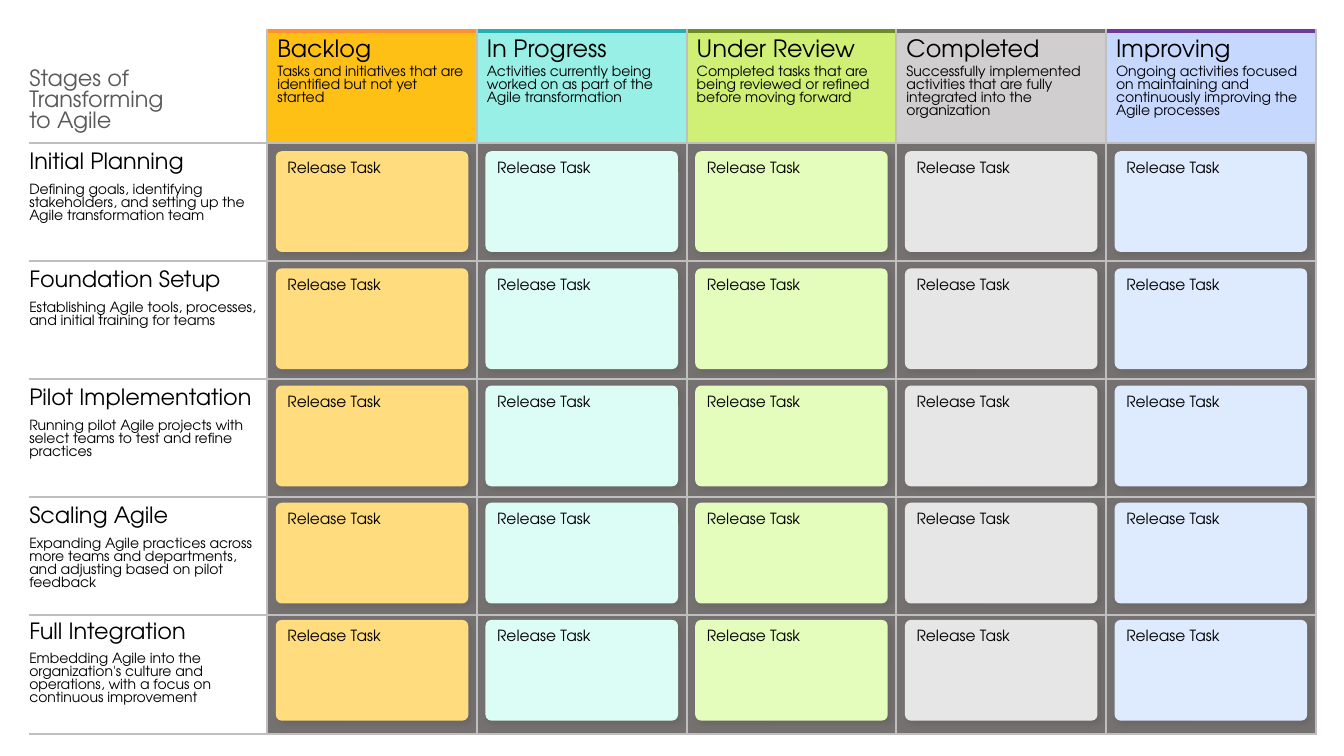
from lxml.etree import SubElement
from pptx import Presentation
from pptx.dml.color import RGBColor
from pptx.enum.shapes import MSO_SHAPE
from pptx.enum.text import MSO_ANCHOR, PP_ALIGN
from pptx.oxml.ns import qn
from pptx.util import Inches, Pt

FONT = "TeX Gyre Adventor"
NO_STYLE = "{2D5ABB26-0587-4C30-8999-92F81FD0307C}"
COLORS = {"text": "000000", "title": "595959", "shadow": "595959",
          "line": "BFBFBF", "lane": "767171"}
TITLE = "Stages of\nTransforming \vto Agile"
COLUMNS = [
    ("Backlog", "Tasks and initiatives that are identified but not yet started",
     {"top": "FF9132", "head": "FFC016", "card": "FFDC7E"}),
    ("In Progress", "Activities currently being worked on as part of the Agile transformation",
     {"top": "26AFAE", "head": "98EFE6", "card": "DBFDF5"}),
    ("Under Review", "Completed tasks that are being reviewed or refined before moving forward",
     {"top": "6D8D24", "head": "CFEF75", "card": "E4FCBC"}),
    ("Completed", "Successfully implemented activities that are fully integrated into the organization",
     {"top": "767171", "head": "D0CECE", "card": "E7E6E6"}),
    ("Improving", "Ongoing activities focused on maintaining and continuously improving the Agile processes",
     {"top": "6F3B9A", "head": "C7D8FF", "card": "DEEBFF"}),
]
STAGES = [
    ("Initial Planning",
     "Defining goals, identifying stakeholders, and setting up the Agile transformation team"),
    ("Foundation Setup",
     "Establishing Agile tools, processes, and initial training for teams"),
    ("Pilot Implementation",
     "Running pilot Agile projects with select teams to test and refine practices"),
    ("Scaling Agile",
     "Expanding Agile practices across more teams and departments, and adjusting based on pilot feedback"),
    ("Full Integration",
     "Embedding Agile into the organization's culture and operations, with a focus on continuous improvement"),
]
STAGE_W, COL_W = 2.36, 2.08
ROW_HEIGHTS = [0.35, 0.76] + [0.41, 0.76] * 4 + [0.38, 0.8]
CARD_W, CARD_H = 1.91, 1


def write(tf, text, size, color=COLORS["text"]):
    tf.text = text
    for p in tf.paragraphs:
        p.alignment = PP_ALIGN.LEFT
        p.font.name = FONT
        p.font.size = Pt(size)
        p.font.color.rgb = RGBColor.from_string(color)


def set_borders(cell, sides, top=(COLORS["line"], 1.5)):
    tcPr = cell._tc.get_or_add_tcPr()
    for i, side in enumerate("LRTB"):
        color, width = top if side == "T" else (COLORS["line"], 1.5)
        ln = SubElement(tcPr, qn(f"a:ln{side}"), w=str(Pt(width) if side in sides else 0))
        if side in sides:
            fill = SubElement(ln, qn("a:solidFill"))
            SubElement(fill, qn("a:srgbClr"), val=color)
        else:
            SubElement(ln, qn("a:noFill"))
        tcPr.insert(i, ln)


def fill_cell(cell, text, size, margins, fill=None, anchor=MSO_ANCHOR.TOP, color=COLORS["text"]):
    write(cell.text_frame, text, size, color)
    cell.vertical_anchor = anchor
    (cell.margin_left, cell.margin_top,
     cell.margin_right, cell.margin_bottom) = [Inches(m) for m in margins]
    if fill:
        cell.fill.solid()
        cell.fill.fore_color.rgb = RGBColor.from_string(fill)
    else:
        cell.fill.background()


def add_board(s, left, top):
    width = STAGE_W + COL_W * len(COLUMNS)
    frame = s.shapes.add_table(len(ROW_HEIGHTS), len(COLUMNS) + 1, Inches(left), Inches(top),
                               Inches(width), Inches(sum(ROW_HEIGHTS)))
    table = frame.table
    table.first_row = table.horz_banding = False
    table._tbl.tblPr.find(qn("a:tableStyleId")).text = NO_STYLE
    for i, col in enumerate(table.columns):
        col.width = Inches(COL_W if i else STAGE_W)
    for row, height in zip(table.rows, ROW_HEIGHTS):
        row.height = Inches(height)

    corner = table.cell(0, 0)
    corner.merge(table.cell(1, 0))
    fill_cell(corner, TITLE, 16, (0, 0, 0, 0.1), anchor=MSO_ANCHOR.BOTTOM, color=COLORS["title"])
    set_borders(corner, "RB")
    set_borders(table.cell(1, 0), "RB")

    for c, (name, detail, colors) in enumerate(COLUMNS, 1):
        head, note = table.cell(0, c), table.cell(1, c)
        fill_cell(head, name, 17, (0.1, 0.05, 0, 0), colors["head"], MSO_ANCHOR.MIDDLE)
        set_borders(head, "LTR", (colors["top"], 3))
        fill_cell(note, detail, 10, (0.1, 0, 0.1, 0), colors["head"])
        set_borders(note, "LRB")

    for i, (name, detail) in enumerate(STAGES):
        r = 2 + 2 * i
        fill_cell(table.cell(r, 0), name, 16, (0, 0, 0.1, 0), anchor=MSO_ANCHOR.MIDDLE)
        set_borders(table.cell(r, 0), "TR")
        fill_cell(table.cell(r + 1, 0), detail, 10, (0, 0, 0.1, 0))
        set_borders(table.cell(r + 1, 0), "RB")
        for c in range(1, len(COLUMNS) + 1):
            for row, sides in ((r, "LTR"), (r + 1, "LRB")):
                fill_cell(table.cell(row, c), "", 10, (0, 0, 0, 0), COLORS["lane"])
                set_borders(table.cell(row, c), sides)


def add_shadow(sp):
    sp.shadow.inherit = False
    effects = sp._element.spPr.find(qn("a:effectLst"))
    shadow = SubElement(effects, qn("a:outerShdw"), blurRad=str(Pt(4)), dist=str(Pt(3)),
                        dir=str(45 * 60000), algn="tl", rotWithShape="0")
    color = SubElement(shadow, qn("a:srgbClr"), val=COLORS["shadow"])
    SubElement(color, qn("a:alpha"), val="40000")


def add_card(s, left, top, color):
    sp = s.shapes.add_shape(MSO_SHAPE.ROUNDED_RECTANGLE, Inches(left), Inches(top),
                            Inches(CARD_W), Inches(CARD_H))
    sp.adjustments[0] = 0.06
    sp.fill.solid()
    sp.fill.fore_color.rgb = RGBColor.from_string(color)
    sp.line.fill.background()
    add_shadow(sp)
    tf = sp.text_frame
    tf.word_wrap = True
    tf.vertical_anchor = MSO_ANCHOR.TOP
    tf.margin_left = Inches(0.1)
    tf.margin_top = tf.margin_right = tf.margin_bottom = Inches(0.05)
    write(tf, "Release Task", 11)


def add_cards(s, left, top, height):
    pitch = (height - CARD_H) / (len(STAGES) - 1)
    for c, (_, _, colors) in enumerate(COLUMNS):
        x = left + c * COL_W + (COL_W - CARD_W) / 2
        for i in range(len(STAGES)):
            add_card(s, x, top + i * pitch, colors["card"])


def main():
    prs = Presentation()
    prs.slide_width, prs.slide_height = Inches(13.33), Inches(7.5)
    s = prs.slides.add_slide(prs.slide_layouts[6])
    left, top = 0.29, 0.31
    add_board(s, left, top)
    add_cards(s, left + STAGE_W, top + 1.19, 5.65)
    prs.save("out.pptx")


if __name__ == "__main__":
    main()
